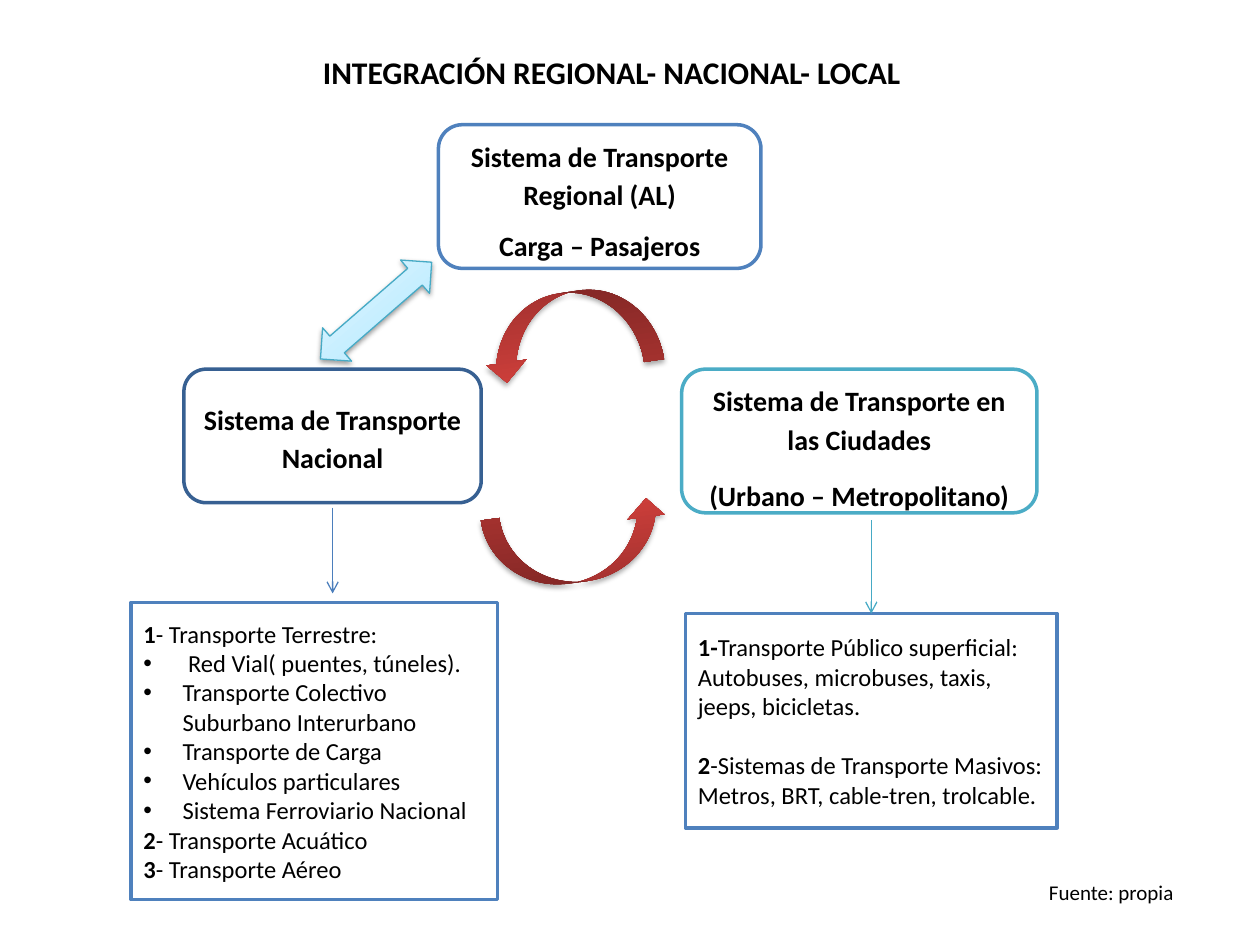
import pptx
import pptx.util
import pptx.dml.color
import pptx.enum.shapes
import pptx.enum.text
import pptx.oxml
import pptx.oxml.ns

SHAPE = pptx.enum.shapes.MSO_SHAPE
ALIGN = pptx.enum.text.PP_ALIGN
ANCHOR = pptx.enum.text.MSO_ANCHOR
qn = pptx.oxml.ns.qn
Pt = pptx.util.Pt

THEME = {
    "font": "Calibri", "text": "000000", "paper": "FFFFFF",
    "blue": "4F81BD", "navy": "376092", "teal": "4BACC6",
    "blue_arrow": "4B7EBC", "teal_arrow": "46AAC5",
    "sky": [(0, "A7E6FF"), (35, "C1EDFF"), (100, "E7F8FF")],
    "red": [(0, "9C2F2D"), (80, "CB3E3A"), (100, "CE3B37")],
    "title": 18, "system": 16, "list": 14, "source": 12,
    "outline": 2, "thin": 0.75,
}

# Content; places are left, top, width, height in percent of the slide
TITLE = ("INTEGRACIÓN REGIONAL- NACIONAL- LOCAL", (23.7, 4.93, 49.7, 5.33), "title", True)
SOURCE = ("Fuente: propia", (82.2, 92.4, 12, 4), "source", False)

# Text and line spacing of each paragraph
SYSTEMS = {
    "regional": ((34.8, 13.2, 25.6, 15.2), "blue", ANCHOR.TOP,
                 [("Sistema de Transporte Regional (AL)", 1.15), ("Carga – Pasajeros", 1.0)]),
    "nacional": ((14.6, 39.07, 23.6, 14.13), "navy", ANCHOR.MIDDLE,
                 [("Sistema de Transporte Nacional", 1.15)]),
    "ciudades": ((54.1, 39.07, 28.2, 15.2), "teal", ANCHOR.TOP,
                 [("Sistema de Transporte en las Ciudades", 1.15),
                  ("(Urbano – Metropolitano)", 1.15)]),
}

# Bold lead, text; a lead of "•" makes a bullet
LISTS = {
    "nacional": ((10.4, 63.73, 29.1, 31.47), 0, [
        ("1", "- Transporte Terrestre:"),
        ("•", " Red Vial( puentes, túneles)."),
        ("•", "Transporte Colectivo Suburbano Interurbano"),
        ("•", "Transporte de Carga"),
        ("•", "Vehículos particulares"),
        ("•", "Sistema Ferroviario Nacional"),
        ("2", "- Transporte Acuático"),
        ("3", "- Transporte Aéreo")]),
    "ciudades": ((54.4, 64.93, 29.5, 22.67), 17, [
        ("1-", "Transporte Público superficial: Autobuses, microbuses, taxis, jeeps, bicicletas."),
        ("2", "-Sistemas de Transporte Masivos: Metros, BRT, cable-tren, trolcable.")]),
}

# Preset, place, rotation, gradient, outline, shadow opacity and distance
BLOCK_ARROWS = [
    (SHAPE.LEFT_RIGHT_ARROW, (24, 30.53, 11.7, 4.67), 319, "sky", "teal_arrow", 38, 1.6),
    (SHAPE.CURVED_UP_ARROW, (38.1, 30.93, 14.2, 8.53), 171.4, "red", None, 35, 1.8),
    (SHAPE.CURVED_UP_ARROW, (38.5, 53.73, 14.7, 7.87), 352.3, "red", None, 35, 1.8),
]

# System, top and bottom in percent, colour, whether it joins the list below
DOWN_ARROWS = [
    ("nacional", 53.73, 62.8, "blue_arrow", False),
    ("ciudades", 55.07, 64.93, "teal_arrow", True),
]

deck = pptx.Presentation()
deck.slide_width = pptx.util.Inches(10)
deck.slide_height = pptx.util.Inches(7.5)
page = deck.slides.add_slide(deck.slide_layouts[6])


def across(share):
    return round(deck.slide_width * share / 100)


def down(share):
    return round(deck.slide_height * share / 100)


def place(area):
    left, top, width, height = area
    return across(left), down(top), across(width), down(height)


def color(name):
    return pptx.dml.color.RGBColor.from_string(THEME[name])


def apply(target, values):
    for name, value in values.items():
        setattr(target, name, value)


def add_span(para, text, size, bold):
    span = para.add_run()
    span.text = text
    apply(span.font, {"name": THEME["font"], "size": Pt(THEME[size]), "bold": bold})
    span.font.color.rgb = color("text")


def next_para(frame, index):
    return frame.add_paragraph() if index else frame.paragraphs[0]


def add_panel(preset, area, outline, anchor):
    box = page.shapes.add_shape(preset, *place(area))
    box.shadow.inherit = False
    box.fill.solid()
    box.fill.fore_color.rgb = color("paper")
    box.line.color.rgb = color(outline)
    box.line.width = Pt(THEME["outline"])
    apply(box.text_frame, {"word_wrap": True, "vertical_anchor": anchor})
    return box


def add_label(text, area, size, bold):
    box = page.shapes.add_textbox(*place(area))
    box.text_frame.word_wrap = False
    para = box.text_frame.paragraphs[0]
    para.alignment = ALIGN.CENTER
    add_span(para, text, size, bold)


def add_bullet(para):
    props = para._p.get_or_add_pPr()
    indent = pptx.util.Inches(0.31)
    props.set("marL", str(indent))
    props.set("indent", str(-indent))
    props.append(pptx.oxml.parse_xml(
        f'<a:buFont {pptx.oxml.ns.nsdecls("a")} typeface="Arial"/>'))
    props.append(pptx.oxml.parse_xml(
        f'<a:buChar {pptx.oxml.ns.nsdecls("a")} char="•"/>'))


def color_xml(tag, value, attributes="", inner=""):
    return pptx.oxml.parse_xml(
        f'<a:{tag} {pptx.oxml.ns.nsdecls("a")} {attributes}>'
        f'<a:srgbClr val="{value}">{inner}</a:srgbClr></a:{tag}>')


# Rounded system boxes
for area, outline, anchor, lines in SYSTEMS.values():
    frame = add_panel(SHAPE.ROUNDED_RECTANGLE, area, outline, anchor).text_frame
    frame.margin_top = pptx.util.Inches(0.02 if anchor == ANCHOR.TOP else 0.05)
    for index, (text, spacing) in enumerate(lines):
        para = next_para(frame, index)
        apply(para, {"alignment": ALIGN.CENTER, "line_spacing": spacing,
                     "space_before": Pt(10 if index else 0)})
        add_span(para, text, "system", True)

# Gradient arrows between the systems
for preset, area, turn, gradient, outline, opacity, distance in BLOCK_ARROWS:
    arrow = page.shapes.add_shape(preset, *place(area))
    arrow.rotation = turn
    arrow.fill.gradient()
    arrow.fill.gradient_angle = 90
    stops = arrow._element.spPr.find(".//" + qn("a:gsLst"))
    for stop in list(stops):
        stops.remove(stop)
    for position, value in THEME[gradient]:
        stops.append(color_xml("gs", value, f'pos="{position * 1000}"'))
    if outline:
        arrow.line.color.rgb = color(outline)
        arrow.line.width = Pt(THEME["thin"])
    else:
        arrow.line.fill.background()
    arrow.shadow.inherit = False
    arrow._element.spPr.find(qn("a:effectLst")).append(color_xml(
        "outerShdw", THEME["text"],
        f'blurRad="{Pt(3.1)}" dist="{Pt(distance)}" dir="5400000" rotWithShape="0"',
        f'<a:alpha val="{opacity * 1000}"/>'))

# Lists of transport modes
panels = {}
for name, (area, gap, items) in LISTS.items():
    panels[name] = add_panel(SHAPE.RECTANGLE, area, "blue", ANCHOR.MIDDLE)
    for index, (lead, text) in enumerate(items):
        para = next_para(panels[name].text_frame, index)
        apply(para, {"alignment": ALIGN.LEFT, "space_before": Pt(gap if index else 0)})
        if lead == "•":
            add_bullet(para)
        else:
            add_span(para, lead, "list", True)
        add_span(para, text, "list", False)

# Thin arrows from each system down to its list
for name, top, bottom, tint, joined in DOWN_ARROWS:
    left, _, width, _ = (LISTS if joined else SYSTEMS)[name][0]
    middle = across(left + width / 2)
    link = page.shapes.add_connector(
        pptx.enum.shapes.MSO_CONNECTOR.STRAIGHT, middle, down(top), middle, down(bottom))
    if joined:
        link.end_connect(panels[name], 0)
    link.line.color.rgb = color(tint)
    link.line.width = Pt(THEME["thin"])
    link.line._get_or_add_ln().append(pptx.oxml.parse_xml(
        f'<a:tailEnd {pptx.oxml.ns.nsdecls("a")} type="arrow"/>'))
    link._element.spPr.append(pptx.oxml.parse_xml(
        f'<a:effectLst {pptx.oxml.ns.nsdecls("a")}/>'))

# Title and source
for label in (TITLE, SOURCE):
    add_label(*label)

deck.save("out.pptx")
